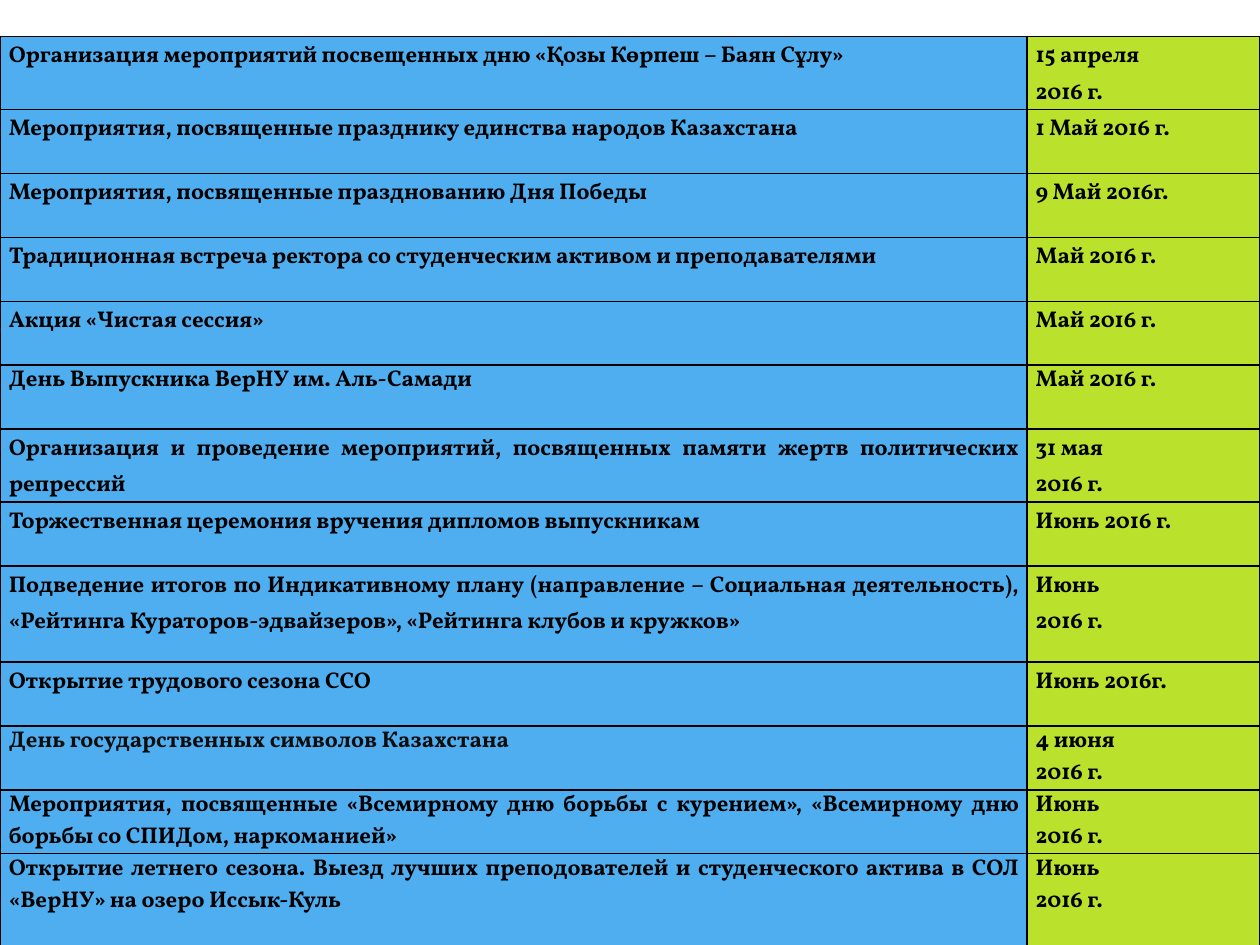
from lxml.etree import SubElement
from pptx import Presentation
from pptx.dml.color import RGBColor
from pptx.enum.text import PP_ALIGN
from pptx.oxml.ns import qn
from pptx.util import Inches, Pt


def paint(fill, tone):
    fill.solid()
    fill.fore_color.rgb = RGBColor.from_string(tone)


def edge(cell):
    props = cell._tc.get_or_add_tcPr()
    for side in ("lnL", "lnR", "lnT", "lnB"):
        line = SubElement(props, qn(f"a:{side}"), w=str(Pt(1)))
        SubElement(SubElement(line, qn("a:solidFill")), qn("a:srgbClr"), val="000000")


plan = [
    ("Организация мероприятий посвещенных дню «Қозы Көрпеш – Баян Сұлу»", "15 апреля\n2016 г."),
    ("Мероприятия, посвященные празднику единства народов Казахстана", "1 Май 2016 г."),
    ("Мероприятия, посвященные празднованию Дня Победы", "9 Май 2016г."),
    ("Традиционная встреча ректора со студенческим активом и преподавателями", "Май 2016 г."),
    ("Акция «Чистая сессия»", "Май 2016 г."),
    ("День Выпускника ВерНУ им. Аль-Самади", "Май 2016 г."),
    ("Организация и проведение мероприятий, посвященных памяти жертв политических репрессий",
     "31 мая\n2016 г."),
    ("Торжественная церемония вручения дипломов выпускникам", "Июнь 2016 г."),
    ("Подведение итогов по Индикативному плану (направление – Социальная деятельность), "
     "«Рейтинга Кураторов-эдвайзеров», «Рейтинга клубов и кружков»", "Июнь\n2016 г."),
    ("Открытие трудового сезона ССО", "Июнь 2016г."),
    ("День государственных символов Казахстана", "4 июня\n2016 г."),
    ("Мероприятия, посвященные «Всемирному дню борьбы с курением», "
     "«Всемирному дню борьбы со СПИДом, наркоманией»", "Июнь\n2016 г."),
    ("Открытие летнего сезона. Выезд лучших преподователей и студенческого актива в СОЛ "
     "«ВерНУ» на озеро Иссык-Куль", "Июнь\n2016 г."),
]
tight = {5, 10, 11, 12}
tall = {0: 0.54, 6: 0.58, 8: 0.76, 12: 0.76}
wide, high, top = 10, 7.5, 0.29
unit = (high - top - sum(tall.values())) / (len(plan) - len(tall))
looks = [("4EAEF0", PP_ALIGN.JUSTIFY, 0.815), ("BAE12B", PP_ALIGN.LEFT, 0.185)]

deck = Presentation()
deck.slide_width, deck.slide_height = Inches(wide), Inches(high)
slide = deck.slides.add_slide(deck.slide_layouts[6])
paint(slide.background.fill, "FFFFFF")
grid = slide.shapes.add_table(
    len(plan), len(looks), 0, Inches(top), Inches(wide), Inches(high - top)).table
grid.first_row = grid.horz_banding = False

for col, look in zip(grid.columns, looks):
    col.width = Inches(wide * look[2])

for row, texts in enumerate(plan):
    grid.rows[row].height = Inches(tall.get(row, unit))
    for col, (tone, align, share) in enumerate(looks):
        cell = grid.cell(row, col)
        edge(cell)
        paint(cell.fill, tone)
        cell.margin_left = cell.margin_right = Inches(0.07)
        cell.margin_top = cell.margin_bottom = 0
        cell.text = texts[col]
        for para in cell.text_frame.paragraphs:
            para.alignment = align
            para.line_spacing = 1.0 if row in tight else 1.15
            para.font.name = "Vollkorn"
            para.font.size = Pt(13)
            para.font.bold = True
            paint(para.font.fill, "0D0D0D" if (row, col) == (10, 0) else "000000")

deck.save("out.pptx")
